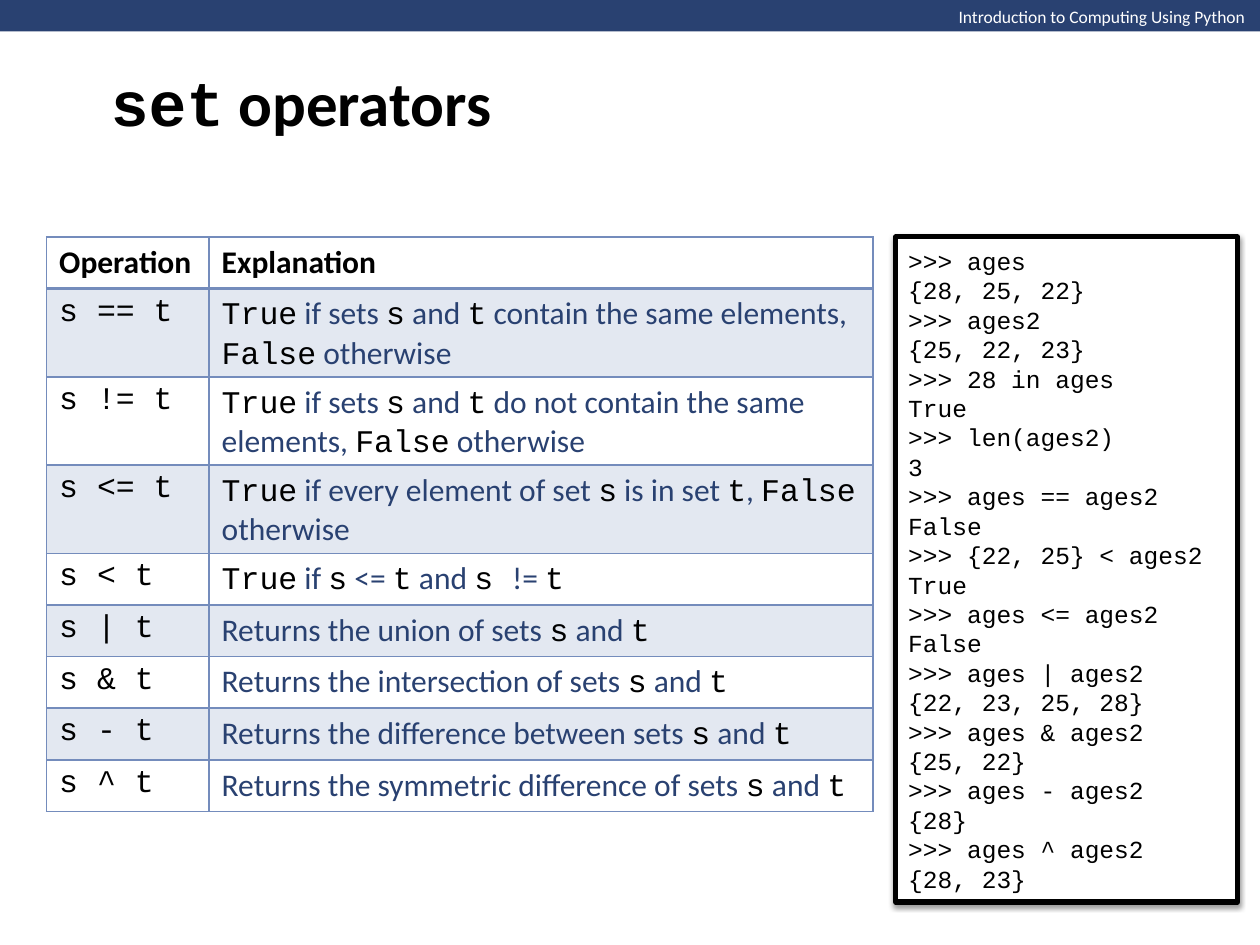
from dataclasses import dataclass

from lxml import etree
from pptx import Presentation
from pptx.dml.color import RGBColor
from pptx.enum.shapes import MSO_SHAPE
from pptx.enum.text import MSO_ANCHOR, MSO_AUTO_SIZE, PP_ALIGN
from pptx.oxml import parse_xml
from pptx.oxml.ns import nsdecls, qn
from pptx.util import Inches, Pt

RECT = MSO_SHAPE.RECTANGLE
MIDDLE = MSO_ANCHOR.MIDDLE
LEFT = PP_ALIGN.LEFT
NO_FIT = MSO_AUTO_SIZE.NONE
TITLE_ONLY = 5
COLS, ROWS = 100, 75  # slide grid


@dataclass(frozen=True)
class Theme:
    navy: str = "294171"
    rule: str = "748CBC"
    ink: str = "000000"
    paper: str = "FFFFFF"
    sans: str = "Calibri"
    mono: str = "Courier New"
    title: int = 36
    body: int = 18
    code: int = 14
    small: int = 10
    tint: int = 20  # band opacity in percent


@dataclass(frozen=True)
class Box:
    """Place and size in grid columns and rows."""
    col: float
    row: float
    wide: float
    high: float


@dataclass(frozen=True)
class Op:
    sign: str
    text: str  # backticks mark code


THEME = Theme()

BAR = Box(0, 0, 100.1, 2.5)
COURSE = Box(75.1, 0, 25, 2.7)
TITLE = Box(7.8, 0, 85, 16.1)
SHELL = Box(71.1, 18.8, 27.1, 52.8)
TABLE = Box(3.7, 18.8, 65.6, 36.9)
SIGN_COL = 12.9

OPS = [
    Op("==", "`True` if sets `s` and `t` contain the same elements, `False` otherwise"),
    Op("!=", "`True` if sets `s` and `t` do not contain the same elements, `False` otherwise"),
    Op("<=", "`True` if every element of set `s` is in set `t`, `False` otherwise"),
    Op("<", "`True` if `s` <= `t` and `s `!= `t`"),
    Op("|", "Returns the union of sets `s` and `t`"),
    Op("&", "Returns the intersection of sets `s` and `t`"),
    Op("-", "Returns the difference between sets `s` and `t`"),
    Op("^", "Returns the symmetric difference of sets `s` and `t`"),
]

SESSION = """>>> ages
{28, 25, 22}
>>> ages2
{25, 22, 23}
>>> 28 in ages
True
>>> len(ages2)
3
>>> ages == ages2
False
>>> {22, 25} < ages2
True
>>> ages <= ages2
False
>>> ages | ages2
{22, 23, 25, 28}
>>> ages & ages2
{25, 22}
>>> ages - ages2
{28}
>>> ages ^ ages2
{28, 23}"""

deck = Presentation()
deck.slide_width, deck.slide_height = Inches(10), Inches(7.5)
slide = deck.slides.add_slide(deck.slide_layouts[TITLE_ONLY])


def across(cols: float) -> int:
    return round(deck.slide_width * cols / COLS)


def down(rows: float) -> int:
    return round(deck.slide_height * rows / ROWS)


def frame(box: Box) -> tuple[int, int, int, int]:
    return across(box.col), down(box.row), across(box.wide), down(box.high)


def style(run, size: int, face: str, color: str, bold: bool = False) -> None:
    font = run.font
    font.size, font.name, font.bold = Pt(size), face, bold
    font.color.rgb = RGBColor.from_string(color)


def write(para, text: str, size: int, color: str, bold: bool = False) -> None:
    """Set text whose parts in backticks are code."""
    for num, part in enumerate(text.split("`")):
        if part:
            run = para.add_run()
            run.text = part
            code = num % 2 == 1
            style(run, size, THEME.mono if code else THEME.sans,
                  THEME.ink if code else color, bold)


def panel(box: Box, fill: str):
    shape = slide.shapes.add_shape(RECT, *frame(box))
    shape.shadow.inherit = False
    shape.fill.solid()
    shape.fill.fore_color.rgb = RGBColor.from_string(fill)
    shape.line.fill.background()
    return shape


def edge(cell, side: str, width: float) -> None:
    cell._tc.get_or_add_tcPr().append(parse_xml(
        f'<a:ln{side} {nsdecls("a")} w="{Pt(width)}"><a:solidFill>'
        f'<a:srgbClr val="{THEME.rule}"/></a:solidFill></a:ln{side}>'))


def dress(cell, row: int) -> None:
    """Rule a cell and tint every other row."""
    for side in "LRTB":
        thick = (row, side) in ((0, "B"), (1, "T"))
        edge(cell, side, 2 if thick else 1)
    if row % 2 == 0:
        cell.fill.background()
        return
    cell.fill.solid()
    cell.fill.fore_color.rgb = RGBColor.from_string(THEME.rule)
    tone = cell._tc.tcPr.find(f'{qn("a:solidFill")}/{qn("a:srgbClr")}')
    etree.SubElement(tone, qn("a:alpha"), val=str(THEME.tint * 1000))


# Top bar
panel(BAR, THEME.navy)
course = slide.shapes.add_textbox(*frame(COURSE)).text_frame
course.word_wrap = False
write(course.paragraphs[0], "Introduction to Computing Using Python",
      THEME.small, THEME.paper)

# Title
title = slide.shapes.title
title.left, title.top, title.width, title.height = frame(TITLE)
title.text_frame.auto_size = NO_FIT
title.text_frame.vertical_anchor = MIDDLE
head = title.text_frame.paragraphs[0]
head.alignment = LEFT
write(head, "`set` operators", THEME.title, THEME.ink, bold=True)

# Shell session
shell = panel(SHELL, THEME.paper)
shell.line.color.rgb = RGBColor.from_string(THEME.ink)
shell.line.width = Pt(3)
props = shell._element.spPr
props.remove(props.find(qn("a:effectLst")))
props.append(parse_xml(
    f'<a:effectLst {nsdecls("a")}><a:outerShdw blurRad="{Pt(3.1)}" '
    f'dist="{Pt(1.6)}" dir="5400000" rotWithShape="0"><a:srgbClr val="{THEME.ink}">'
    '<a:alpha val="38000"/></a:srgbClr></a:outerShdw></a:effectLst>'))
shell.text_frame.word_wrap = True
shell.text_frame.vertical_anchor = MIDDLE
shell.text_frame.text = SESSION
for para in shell.text_frame.paragraphs:
    para.alignment = LEFT
    style(para.runs[0], THEME.code, THEME.mono, THEME.ink)

# Table of operators
lines = [("Operation", "Explanation")]
lines += [(f"`s {op.sign} t`", op.text) for op in OPS]
table = slide.shapes.add_table(len(lines), 2, *frame(TABLE)).table
table.first_row = table.horz_banding = False
table.columns[0].width = across(SIGN_COL)
table.columns[1].width = across(TABLE.wide - SIGN_COL)
for row, line in enumerate(lines):
    for col, text in enumerate(line):
        cell = table.cell(row, col)
        dress(cell, row)
        write(cell.text_frame.paragraphs[0], text, THEME.body,
              THEME.navy if row else THEME.ink, bold=row == 0)

deck.save("out.pptx")
